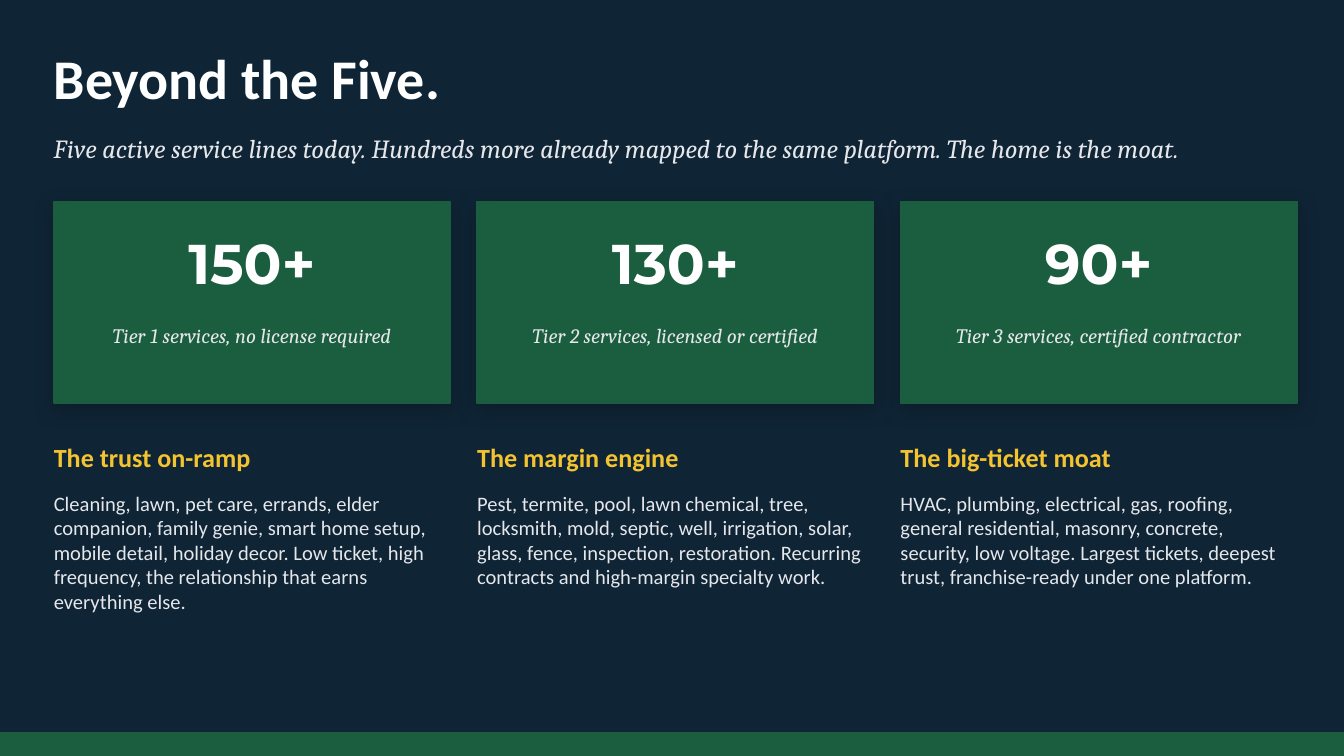
from dataclasses import dataclass

from lxml.etree import SubElement
from pptx import Presentation
from pptx.dml.color import RGBColor
from pptx.enum.shapes import MSO_SHAPE
from pptx.enum.text import MSO_ANCHOR, MSO_AUTO_SIZE, PP_ALIGN
from pptx.oxml.ns import qn
from pptx.util import Pt

HEADLINE = "Beyond the Five."
SUBTITLE = (
    "Five active service lines today. Hundreds more already mapped to the same "
    "platform. The home is the moat."
)
TIERS = [
    {
        "count": "150+",
        "caption": "Tier 1 services, no license required",
        "heading": "The trust on-ramp",
        "detail": "Cleaning, lawn, pet care, errands, elder companion, family genie, "
        "smart home setup, mobile detail, holiday decor. Low ticket, high frequency, "
        "the relationship that earns everything else.",
    },
    {
        "count": "130+",
        "caption": "Tier 2 services, licensed or certified",
        "heading": "The margin engine",
        "detail": "Pest, termite, pool, lawn chemical, tree, locksmith, mold, septic, "
        "well, irrigation, solar, glass, fence, inspection, restoration. Recurring "
        "contracts and high-margin specialty work.",
    },
    {
        "count": "90+",
        "caption": "Tier 3 services, certified contractor",
        "heading": "The big-ticket moat",
        "detail": "HVAC, plumbing, electrical, gas, roofing, general residential, "
        "masonry, concrete, security, low voltage. Largest tickets, deepest trust, "
        "franchise-ready under one platform.",
    },
]


@dataclass(frozen=True)
class Theme:
    navy: str = "0F2435"
    green: str = "1B5E3F"
    gold: str = "F4C430"
    white: str = "FFFFFF"
    pale: str = "E5E7EB"
    shadow: str = "000000"
    sans: str = "Calibri"
    serif: str = "Cambria"
    figure: str = "Montserrat"
    display: int = 30
    lead: int = 14
    body: int = 11


THEME = Theme()
SCALE = 4572
SLIDE_WIDTH, SLIDE_HEIGHT = 2000, 1125
MARGIN, CONTENT_WIDTH = 80, 1840
CARD_TOP, CARD_WIDTH, CARD_HEIGHT, CARD_GAP = 300, 590, 300, 40
CAPTION_INSET = 30
FOOTER_TOP, FOOTER_HEIGHT = 1090, 36


def emu(*lengths):
    return [length * SCALE for length in lengths]


def write(slide, text, box, *, size, color, font=THEME.sans, bold=False, italic=False,
          align=PP_ALIGN.LEFT, anchor=MSO_ANCHOR.MIDDLE, holder=None):
    if holder is None:
        holder = slide.shapes.add_textbox(*emu(*box))
    else:
        holder.left, holder.top, holder.width, holder.height = emu(*box)
    frame = holder.text_frame
    frame.auto_size = MSO_AUTO_SIZE.NONE
    frame.word_wrap = True
    frame.margin_left = frame.margin_top = frame.margin_right = frame.margin_bottom = 0
    frame.vertical_anchor = anchor
    paragraph = frame.paragraphs[0]
    paragraph.alignment = align
    run = paragraph.add_run()
    run.text = text
    run.font.name = font
    run.font.size = Pt(size)
    run.font.bold = bold
    run.font.italic = italic
    run.font.color.rgb = RGBColor.from_string(color)


def add_panel(slide, box):
    panel = slide.shapes.add_shape(MSO_SHAPE.RECTANGLE, *emu(*box))
    panel.shadow.inherit = False
    panel.fill.solid()
    panel.fill.fore_color.rgb = RGBColor.from_string(THEME.green)
    panel.line.color.rgb = RGBColor.from_string(THEME.green)
    panel.line.width = Pt(1)
    return panel


def cast_shadow(panel):
    effects = panel._element.spPr.find(qn("a:effectLst"))
    shadow = SubElement(effects, qn("a:outerShdw"), blurRad=str(Pt(12)), dist=str(Pt(3)),
                        dir="5400000", algn="bl", rotWithShape="0")
    tint = SubElement(shadow, qn("a:srgbClr"), val=THEME.shadow)
    SubElement(tint, qn("a:alpha"), val="20000")


def add_tier(slide, tier, left):
    cast_shadow(add_panel(slide, (left, CARD_TOP, CARD_WIDTH, CARD_HEIGHT)))
    write(slide, tier["count"], (left, CARD_TOP + 10, CARD_WIDTH, 160), size=THEME.display,
          color=THEME.white, font=THEME.figure, bold=True, align=PP_ALIGN.CENTER)
    write(slide, tier["caption"],
          (left + CAPTION_INSET, CARD_TOP + 180, CARD_WIDTH - 2 * CAPTION_INSET, 110),
          size=THEME.body, color=THEME.pale, font=THEME.serif, italic=True,
          align=PP_ALIGN.CENTER, anchor=MSO_ANCHOR.TOP)
    write(slide, tier["heading"], (left, 640, CARD_WIDTH, 80), size=THEME.lead,
          color=THEME.gold, bold=True)
    write(slide, tier["detail"], (left, 730, CARD_WIDTH, 340), size=THEME.body,
          color=THEME.pale, anchor=MSO_ANCHOR.TOP)


def main():
    deck = Presentation()
    deck.slide_width, deck.slide_height = emu(SLIDE_WIDTH, SLIDE_HEIGHT)
    slide = deck.slides.add_slide(deck.slide_layouts.get_by_name("Title Only"))
    slide.background.fill.solid()
    slide.background.fill.fore_color.rgb = RGBColor.from_string(THEME.navy)

    write(slide, HEADLINE, (MARGIN, 60, CONTENT_WIDTH, 110), size=THEME.display,
          color=THEME.white, bold=True, holder=slide.shapes.title)
    write(slide, SUBTITLE, (MARGIN, 180, CONTENT_WIDTH, 80), size=THEME.lead,
          color=THEME.pale, font=THEME.serif, italic=True)
    for column, tier in enumerate(TIERS):
        add_tier(slide, tier, MARGIN + column * (CARD_WIDTH + CARD_GAP))
    add_panel(slide, (0, FOOTER_TOP, SLIDE_WIDTH, FOOTER_HEIGHT))
    deck.save("out.pptx")


if __name__ == "__main__":
    main()
